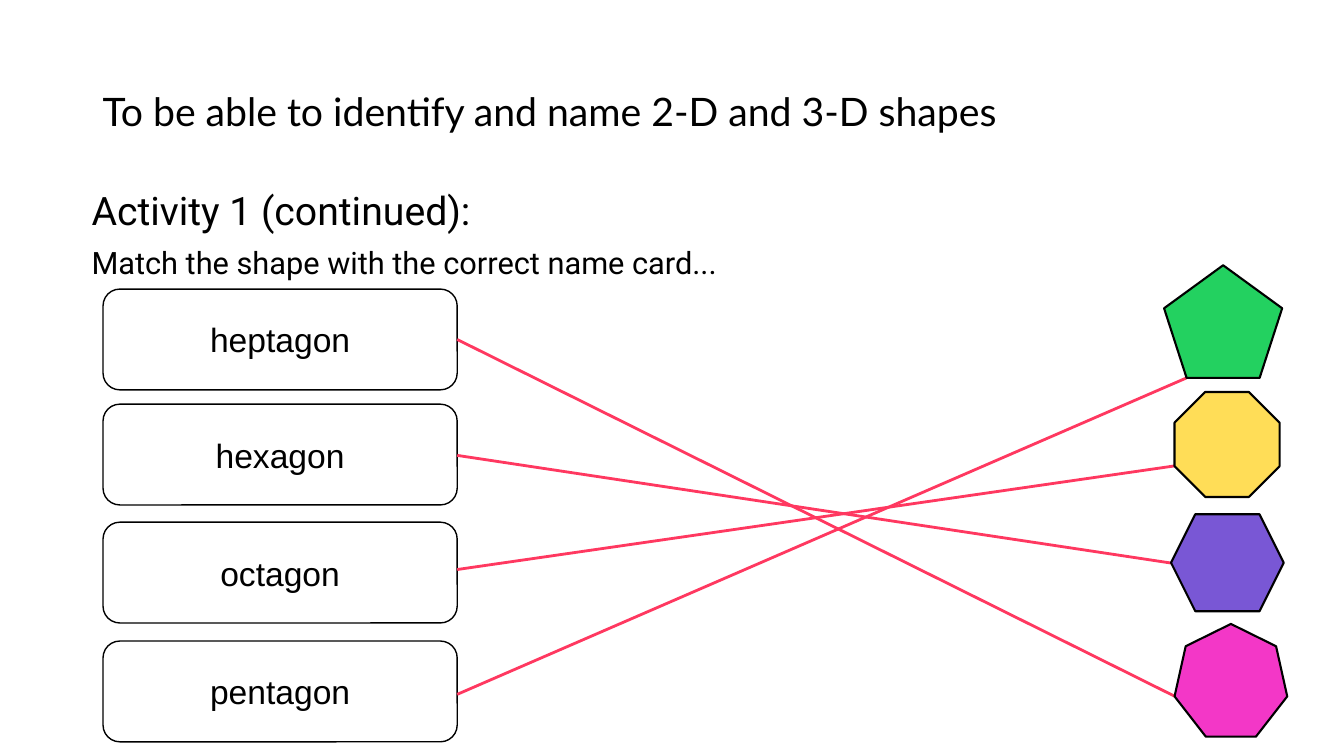
from lxml import etree
from pptx import Presentation
from pptx.dml.color import RGBColor
from pptx.enum.shapes import MSO_CONNECTOR, MSO_SHAPE
from pptx.enum.text import MSO_ANCHOR, PP_ALIGN
from pptx.oxml.ns import qn
from pptx.util import Pt

RECT, CARD = MSO_SHAPE.RECTANGLE, MSO_SHAPE.ROUNDED_RECTANGLE
STRAIGHT = MSO_CONNECTOR.STRAIGHT
TOP, MIDDLE = MSO_ANCHOR.TOP, MSO_ANCHOR.MIDDLE
CENTER = PP_ALIGN.CENTER

# Content: lengths in points
WHITE, BLACK, MATCH_RED = "FFFFFF", "000000", "FF3860"
OBJECTIVE = [("To be able to identify and name 2-D and 3-D shapes", 28)]
ACTIVITY = [
    ("Activity 1 (continued):", 28),
    ("Match the shape with the correct name card...", 22),
]
PANEL_BOX = (12.2, 10.8, 936, 520)
OBJECTIVE_BOX = (66.2, 28.8, 691, 104.4)
ACTIVITY_BOX = (58.3, 133.2, 828, 342.7)
CARD_LEFT, CARD_WIDTH, CARD_HEIGHT = 73.6, 253, 72

# Name, card top, line start height, line end
NAME_CARDS = [
    ("heptagon", 206.5, 242.5, (839, 497.3)),
    ("hexagon", 288.7, 325.3, (836.5, 402.2)),
    ("octagon", 373, 406.8, (839, 332.8)),
    ("pentagon", 457.9, 496, (847.4, 270)),
]
POLYGONS = [
    (MSO_SHAPE.HEXAGON, (836.5, 367.3, 80.5, 69.3), "7957D5"),
    (MSO_SHAPE.HEPTAGON, (839, 445.7, 80.5, 80.5), "F337C7"),
    (MSO_SHAPE.OCTAGON, (839, 280, 75, 75), "FFDD57"),
    (MSO_SHAPE.REGULAR_PENTAGON, (831.5, 189.5, 84.4, 80.5), "23D160"),
]


def color(hex_code):
    return RGBColor.from_string(hex_code)


def add_figure(slide, kind, box, fill, outline, weight):
    figure = slide.shapes.add_shape(kind, *map(Pt, box))
    figure.shadow.inherit = False
    figure.fill.solid()
    figure.fill.fore_color.rgb = color(fill)
    figure.line.color.rgb = color(outline)
    figure.line.width = Pt(weight)
    return figure


def add_words(paragraph, words, size, font):
    run = paragraph.add_run()
    run.text = words
    run.font.size = Pt(size)
    run.font.name = font
    run.font.color.rgb = color(BLACK)


def add_text(slide, box, lines, font, anchor):
    frame = slide.shapes.add_textbox(*map(Pt, box)).text_frame
    frame.word_wrap = True
    frame.vertical_anchor = anchor
    for i, (words, size) in enumerate(lines):
        paragraph = frame.add_paragraph() if i else frame.paragraphs[0]
        paragraph.line_spacing = 0.9
        if i:
            paragraph.space_before = Pt(10)
        add_words(paragraph, words, size, font)


def add_match(slide, start, end):
    match = slide.shapes.add_connector(STRAIGHT, *map(Pt, start + end))
    match.line.color.rgb = color(MATCH_RED)
    match.line.width = Pt(2)
    etree.SubElement(match._element.spPr, qn("a:effectLst"))


def main():
    deck = Presentation()
    deck.slide_width, deck.slide_height = Pt(960), Pt(540)
    slide = deck.slides.add_slide(deck.slide_layouts[6])

    # Translucent panel behind everything
    panel = add_figure(slide, RECT, PANEL_BOX, WHITE, WHITE, 1)
    tint = panel._element.spPr.find(qn("a:solidFill"))[0]
    etree.SubElement(tint, qn("a:alpha"), val="90000")

    # Headings
    add_text(slide, OBJECTIVE_BOX, OBJECTIVE, "Lato", MIDDLE)
    add_text(slide, ACTIVITY_BOX, ACTIVITY, "Roboto", TOP)

    # Name cards and their matching lines
    for name, top, start_y, end in NAME_CARDS:
        card_box = (CARD_LEFT, top, CARD_WIDTH, CARD_HEIGHT)
        card = add_figure(slide, CARD, card_box, WHITE, BLACK, 1)
        card.text_frame.vertical_anchor = MIDDLE
        label = card.text_frame.paragraphs[0]
        label.alignment = CENTER
        add_words(label, name, 24, "Arial")
        add_match(slide, (CARD_LEFT + CARD_WIDTH, start_y), end)

    # Polygons to match
    for kind, box, fill in POLYGONS:
        add_figure(slide, kind, box, fill, BLACK, 1.5)

    deck.save("out.pptx")


if __name__ == "__main__":
    main()
